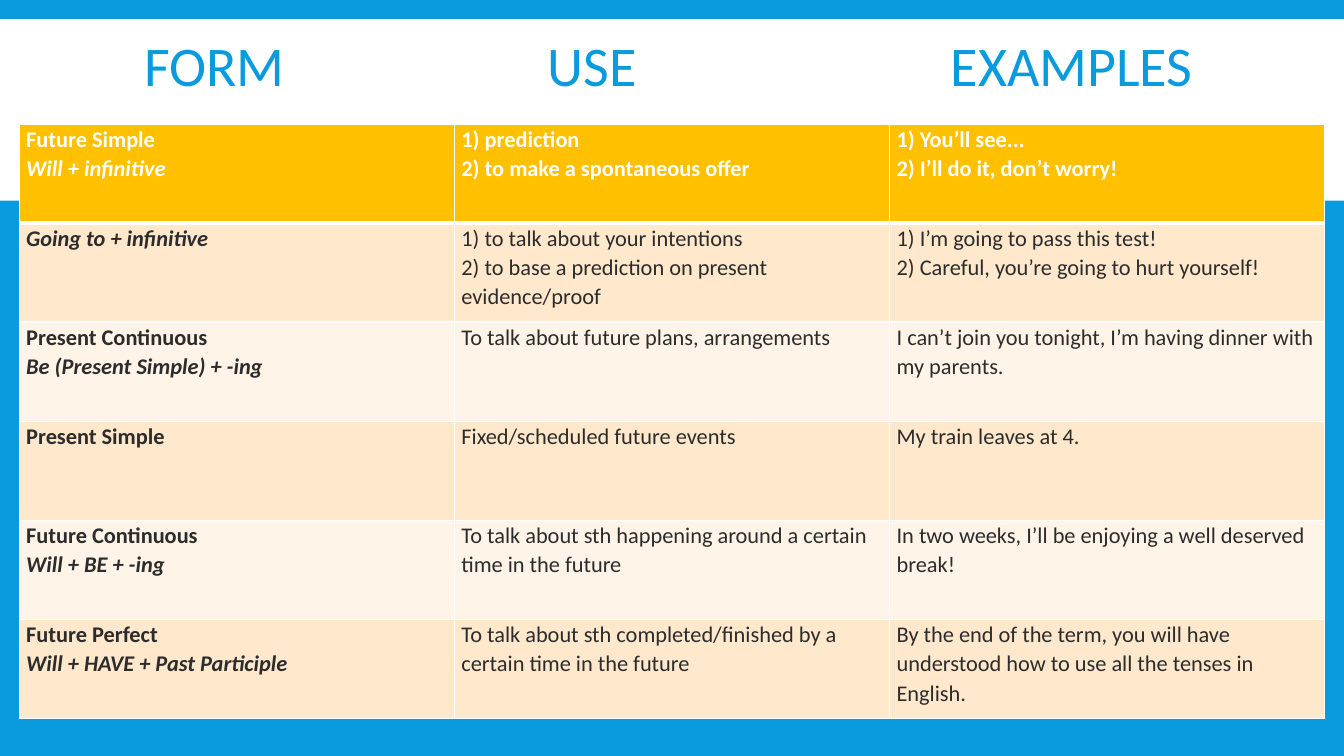
from lxml import etree
from pptx import Presentation
from pptx import util as u
from pptx.dml.color import RGBColor
from pptx.enum import shapes, text
from pptx.oxml.ns import qn

HEADS = ["FORM", "USE", "EXAMPLES"]
# Each row: form name, form pattern, uses, examples
ROWS = [
    ("Future Simple", "Will + infinitive",
     ["1) prediction", "2) to make a spontaneous offer"],
     ["1) You’ll see...", "2) I’ll do it, don’t worry!"]),
    ("", "Going to + infinitive",
     ["1) to talk about your intentions",
      "2) to base a prediction on present evidence/proof"],
     ["1) I’m going to pass this test!",
      "2) Careful, you’re going to hurt yourself!"]),
    ("Present Continuous", "Be (Present Simple) + -ing",
     ["To talk about future plans, arrangements"],
     ["I can’t join you tonight, I’m having dinner with my parents."]),
    ("Present Simple", "",
     ["Fixed/scheduled future events"],
     ["My train leaves at 4."]),
    ("Future Continuous", "Will + BE + -ing",
     ["To talk about sth happening around a certain time in the future"],
     ["In two weeks, I’ll be enjoying a well deserved break!"]),
    ("Future Perfect", "Will + HAVE + Past Participle",
     ["To talk about sth completed/finished by a certain time in the future"],
     ["By the end of the term, you will have understood how to use "
      "all the tenses in English."]),
]
BLUE, WHITE, GOLD, DARK = "099BDD", "FFFFFF", "FFC000", "2C2C2C"
BANDS = ["FFF4E7", "FFE8CC"]
WIDE, HIGH, EDGE = 13.33, 7.5, 0.19
TOP, ROW_H = 1.23, 0.983
SPAN = WIDE - 2 * EDGE
STEP = 4  # distance between heading starts


def paint(target, color):
    target.solid()
    target.fore_color.rgb = RGBColor.from_string(color)


def write(par, words, size, color, bold=False, italic=False):
    run = par.add_run()
    run.text = words
    font = run.font
    font.name, font.size = "Calibri", u.Pt(size)
    font.bold, font.italic = bold, italic
    font.color.rgb = RGBColor.from_string(color)


def border(cell, sides):
    props = cell._tc.get_or_add_tcPr()
    for spot, (side, width) in enumerate(sides.items()):
        line = etree.Element(qn(f"a:ln{side}"), w=str(u.Pt(width)))
        fill = etree.SubElement(line, qn("a:solidFill"))
        etree.SubElement(fill, qn("a:srgbClr"), val=WHITE)
        props.insert(spot, line)


deck = Presentation()
deck.slide_width, deck.slide_height = u.Inches(WIDE), u.Inches(HIGH)
slide = deck.slides.add_slide(deck.slide_layouts[5])
paint(slide.background.fill, BLUE)

# White band behind the title
band = slide.shapes.add_shape(shapes.MSO_SHAPE.RECTANGLE, 0, u.Inches(EDGE),
                              u.Inches(WIDE), u.Inches(1.8))
band.shadow.inherit = False
paint(band.fill, WHITE)
band.line.fill.background()
slide.shapes._spTree.insert(2, band._element)

# Title: three headings on even tab stops
title = slide.shapes.title
title.left, title.top = u.Inches(EDGE), u.Inches(0.31)
title.width, title.height = u.Inches(SPAN), u.Inches(0.76)
frame = title.text_frame
frame.auto_size = text.MSO_AUTO_SIZE.NONE
frame.vertical_anchor = text.MSO_ANCHOR.MIDDLE
frame.margin_left = u.Inches(1.24)
par = frame.paragraphs[0]
par.alignment, par.line_spacing = text.PP_ALIGN.LEFT, 0.85
stops = etree.SubElement(par._p.get_or_add_pPr(), qn("a:tabLst"))
for n in range(1, len(HEADS)):
    etree.SubElement(stops, qn("a:tab"), pos=str(u.Inches(n * STEP)), algn="l")
write(par, "\t".join(HEADS), 40, BLUE)

# Table of tenses
grid = slide.shapes.add_table(len(ROWS), len(HEADS), u.Inches(EDGE),
                              u.Inches(TOP), u.Inches(SPAN),
                              u.Inches(ROW_H * len(ROWS))).table
for r, (name, form, uses, samples) in enumerate(ROWS):
    first = r == 0
    forms = [words for words in (name, form) if words]
    for c, lines in enumerate((forms, uses, samples)):
        cell = grid.cell(r, c)
        paint(cell.fill, GOLD if first else BANDS[r % 2])
        border(cell, {"L": 1, "R": 1, "T": 3 if r == 1 else 1,
                      "B": 3 if first else 1})
        cell.margin_left = cell.margin_right = u.Inches(0.07)
        cell.margin_top = cell.margin_bottom = 0
        for n, words in enumerate(lines):
            body = cell.text_frame
            par = body.add_paragraph() if n else body.paragraphs[0]
            par.line_spacing = 1.07
            write(par, words, 16, WHITE if first else DARK,
                  bold=first or c == 0, italic=c == 0 and words == form)

deck.save("out.pptx")
